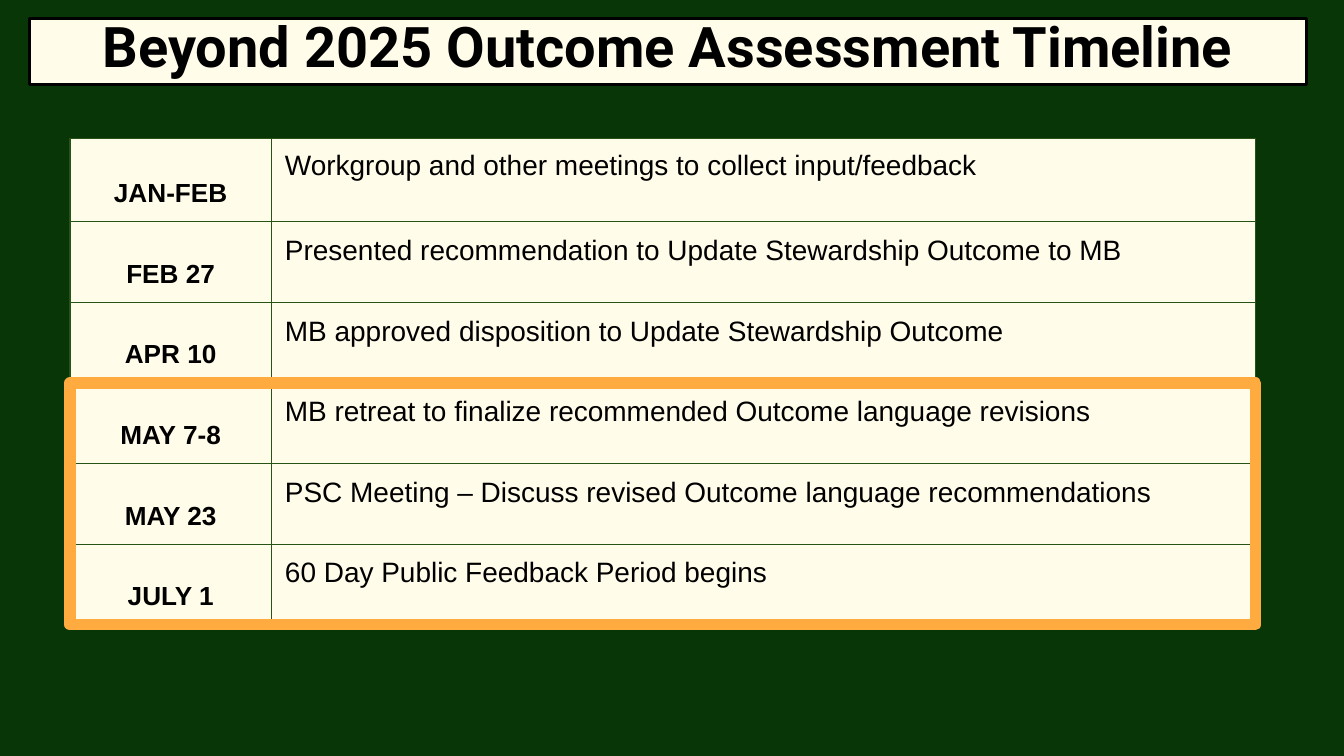
from lxml.etree import SubElement
from pptx import Presentation
from pptx.dml.color import RGBColor
from pptx.enum.shapes import MSO_SHAPE as Shape
from pptx.enum.text import MSO_ANCHOR as Anchor, MSO_AUTO_SIZE as AutoSize, PP_ALIGN as Align
from pptx.oxml.ns import qn
from pptx.util import Inches, Pt

TITLE = "Beyond 2025 Outcome Assessment Timeline"
MILESTONES = [
    ("JAN-FEB", "Workgroup and other meetings to collect input/feedback"),
    ("FEB 27", "Presented recommendation to Update Stewardship Outcome to MB"),
    ("APR 10", "MB approved disposition to Update Stewardship Outcome"),
    ("MAY 7-8", "MB retreat to finalize recommended Outcome language revisions"),
    ("MAY 23", "PSC Meeting – Discuss revised Outcome language recommendations"),
    ("JULY 1", "60 Day Public Feedback Period begins"),
]
FIRST_UPCOMING = 3

GREEN = RGBColor(0x09, 0x36, 0x07)
GRID = RGBColor(0x27, 0x53, 0x16)
CREAM = RGBColor(0xFF, 0xFC, 0xE9)
ORANGE = RGBColor(0xFF, 0xAB, 0x40)
BLACK = RGBColor(0, 0, 0)

WIDTH = 10
HEIGHT = WIDTH * 9 / 16
LEFT, TOP = 0.52, 1.03
COLUMNS = (1.5, 7.32)
ROWS = [0.62] + [0.6] * (len(MILESTONES) - 1)


def write(frame, text, font="Arial", size=15, bold=False, align=Align.LEFT, spacing=None, before=None):
    """Put one formatted paragraph into a text frame."""
    para = frame.paragraphs[0]
    para.alignment = align
    para.line_spacing = spacing
    para.space_before = before
    span = para.add_run()
    span.text = text
    span.font.name, span.font.size, span.font.bold = font, Pt(size), bold
    span.font.color.rgb = BLACK


def style_cell(cell, anchor):
    """Give a cell its borders, fill, margins and anchor."""
    properties = cell._tc.get_or_add_tcPr()
    for side in ("lnL", "lnR", "lnT", "lnB"):
        border = SubElement(properties, qn(f"a:{side}"), w=str(Pt(0.75)))
        fill = SubElement(border, qn("a:solidFill"))
        SubElement(fill, qn("a:srgbClr"), val=str(GRID))
    cell.fill.solid()
    cell.fill.fore_color.rgb = CREAM
    cell.margin_left = cell.margin_right = cell.margin_top = cell.margin_bottom = Inches(0.1)
    cell.vertical_anchor = anchor


def add_title(page):
    """Fill and frame the title placeholder."""
    box = page.shapes.title
    box.left, box.top, box.width, box.height = map(Inches, (0.22, 0.14, 9.5, 0.49))
    box.fill.solid()
    box.fill.fore_color.rgb = CREAM
    box.line.color.rgb, box.line.width = BLACK, Pt(1.5)
    frame = box.text_frame
    frame.auto_size, frame.word_wrap = AutoSize.NONE, True
    frame.vertical_anchor = Anchor.MIDDLE
    frame.margin_left = frame.margin_right = Inches(0.07)
    frame.margin_top = frame.margin_bottom = Inches(0.04)
    write(frame, TITLE, font="Roboto", size=30, bold=True, align=Align.CENTER, spacing=0.8)


def add_timeline(page):
    """Lay out the milestones as a table."""
    area = map(Inches, (LEFT, TOP, sum(COLUMNS), sum(ROWS)))
    table = page.shapes.add_table(len(ROWS), len(COLUMNS), *area).table
    table.first_row = table.horz_banding = False
    for column, width in zip(table.columns, COLUMNS):
        column.width = Inches(width)
    for index, (date, event) in enumerate(MILESTONES):
        table.rows[index].height = Inches(ROWS[index])
        date_cell, event_cell = table.cell(index, 0), table.cell(index, 1)
        style_cell(date_cell, Anchor.BOTTOM)
        style_cell(event_cell, Anchor.TOP)
        write(date_cell.text_frame, date, size=14, bold=True, align=Align.CENTER)
        lead = {} if index else {"spacing": 0.95, "before": Pt(8)}
        write(event_cell.text_frame, event, **lead)


def add_highlight(page):
    """Frame the upcoming milestones."""
    top = TOP + sum(ROWS[:FIRST_UPCOMING])
    area = map(Inches, (LEFT, top, sum(COLUMNS), sum(ROWS[FIRST_UPCOMING:])))
    box = page.shapes.add_shape(Shape.RECTANGLE, *area)
    box.shadow.inherit = False
    box.fill.background()
    box.line.color.rgb, box.line.width = ORANGE, Pt(6)
    SubElement(box.line._get_or_add_ln(), qn("a:round"))


def main():
    """Build the timeline slide."""
    deck = Presentation()
    deck.slide_width, deck.slide_height = Inches(WIDTH), Inches(HEIGHT)
    page = deck.slides.add_slide(deck.slide_layouts[5])
    page.background.fill.solid()
    page.background.fill.fore_color.rgb = GREEN
    add_title(page)
    add_timeline(page)
    add_highlight(page)
    deck.save("out.pptx")


if __name__ == "__main__":
    main()
